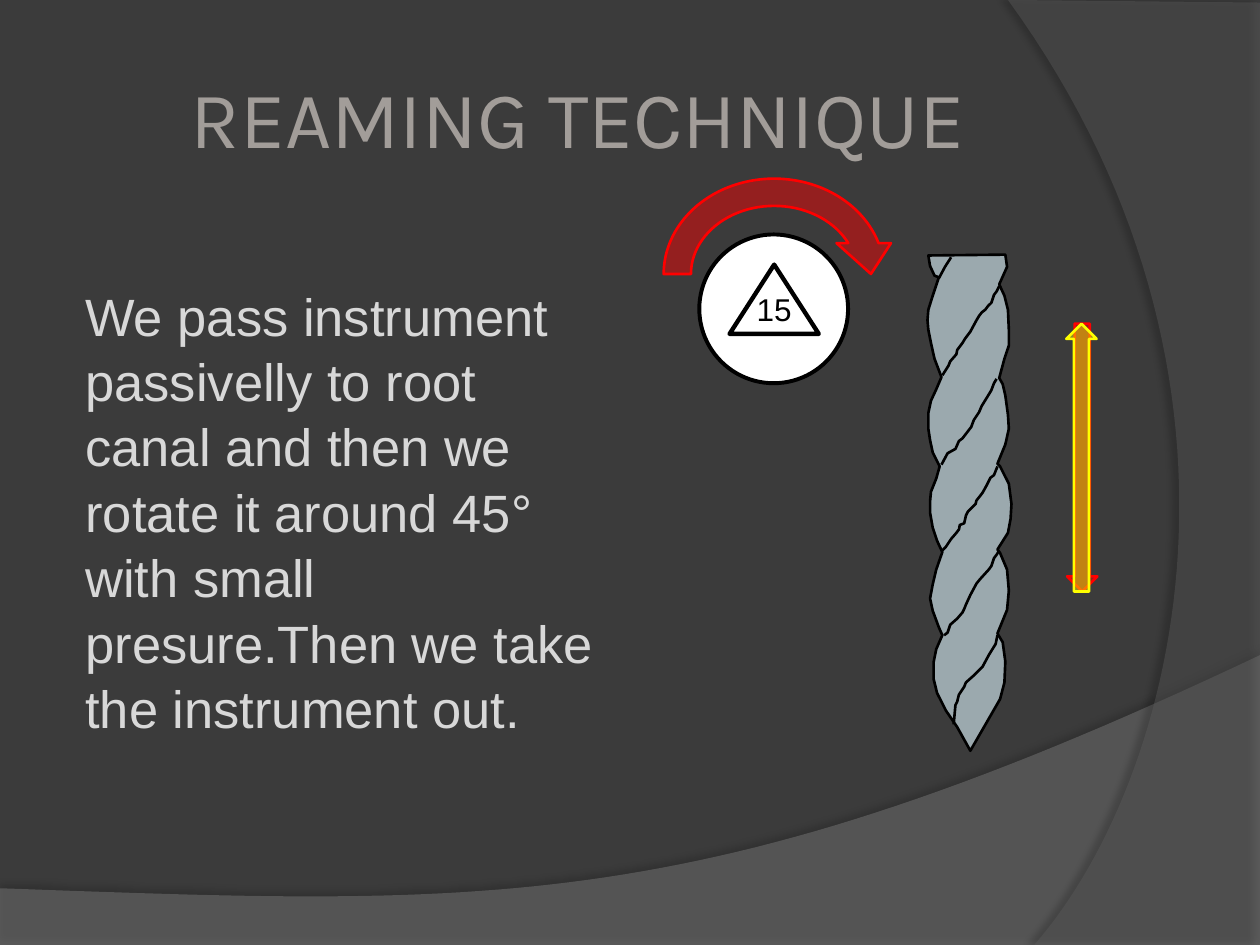
import pptx
import pptx.dml.color
import pptx.enum.shapes
import pptx.enum.text
import pptx.oxml.ns
import pptx.util
from lxml import etree

Pt = pptx.util.Pt
SHAPE = pptx.enum.shapes.MSO_SHAPE
ALIGN = pptx.enum.text.PP_ALIGN
ANCHOR = pptx.enum.text.MSO_ANCHOR
qn = pptx.oxml.ns.qn

# Instrument silhouette and its spiral grooves, in points on the slide
SILHOUETTE = [
    (574.5, 145.5), (530.5, 146), (531.5, 152), (534, 157.5), (536.5, 158.5),
    (533, 169), (530.5, 177), (530, 183), (530.5, 188.5), (532, 196),
    (534, 205), (538, 215.5), (535, 222.5), (532, 229), (530.5, 236),
    (530.5, 245), (531.5, 251.5), (533, 258.5), (537, 266.5), (535, 273.5),
    (532, 281), (531.5, 286.5), (531.5, 293), (533, 301.5), (535.5, 309),
    (538.5, 315.5), (535, 325.5), (533, 334), (531.5, 342), (533, 349),
    (536.5, 358.5), (538.5, 363), (535, 371), (533.5, 378.5), (533.5, 388),
    (535.5, 396), (540.5, 406), (547, 415.5), (554.5, 429), (571.5, 399.5),
    (574, 390), (574.5, 378), (573, 367), (570, 362), (575.5, 348.5),
    (576.5, 337.5), (575.5, 325.5), (571.5, 316), (570, 314), (576, 304.5),
    (577.5, 296.5), (578, 288), (576.5, 276.5), (571.5, 266.5), (570, 265),
    (574.5, 254), (576.5, 245), (576, 237), (574.5, 226), (573, 219.5),
    (571, 216), (574, 205), (576.5, 197.5), (576.5, 188.5), (576, 177),
    (574, 169), (571, 162.5), (575.5, 152.5),
]
GROOVES = [
    [(545, 414), (546, 403), (547, 401), (548, 397), (551, 392.5), (552, 390),
     (556.5, 386), (561.5, 381), (565, 374.5), (566.5, 372), (569, 368), (570, 363)],
    [(539.5, 363), (541.5, 361.5), (543, 357), (547, 353.5), (550, 350), (551, 348),
     (552, 345.5), (554.5, 340), (558, 333.5), (560, 331), (565, 325.5),
     (566.5, 323.5), (568, 319), (569.5, 317), (571, 314.5)],
    [(538.5, 314.5), (540.5, 312.5), (543.5, 308), (546.5, 304.5), (548, 302.5),
     (548.5, 300), (551, 299), (552, 294.5), (553, 292.5), (557.5, 288), (558, 286),
     (560, 283.5), (561.5, 281.5), (564, 277), (566, 273), (568, 271.5), (570, 266.5)],
    [(538, 265.5), (541.5, 259), (546, 256.5), (548, 252), (550, 250.5), (555, 244),
     (556.5, 240), (559.5, 235.5), (561, 232), (565, 225.5), (566.5, 223),
     (568, 219), (569.5, 216.5)],
    [(538.5, 214.5), (542, 209), (543, 206.5), (546.5, 202.5), (547, 200), (550, 196),
     (551.5, 193.5), (554.5, 189.5), (558, 183), (559.5, 180.5), (561, 178.5),
     (563, 177), (564.5, 175), (566.5, 173), (568, 168.5), (569.5, 166.5), (571, 163.5)],
    [(536.5, 159), (540, 152.5), (543.5, 147)],
]


def rgb(code):
    return pptx.dml.color.RGBColor.from_string(code)


def paint(shape, fill=None, opacity=100, line=None, weight=1.5):
    """Set fill, opacity and line, and remove the theme shadow."""
    shape.shadow.inherit = False
    if fill:
        shape.fill.solid()
        shape.fill.fore_color.rgb = rgb(fill)
        if opacity < 100:
            color = shape.fill._xPr.find(qn("a:solidFill"))[0]
            etree.SubElement(color, qn("a:alpha"), val=str(opacity * 1000))
    else:
        shape.fill.background()
    if line:
        shape.line.color.rgb = rgb(line)
        shape.line.width = Pt(weight)
    else:
        shape.line.fill.background()


def add_preset(shapes, kind, box, **look):
    shape = shapes.add_shape(kind, *map(Pt, box))
    paint(shape, **look)
    return shape


def add_outline(shapes, points, closed=True, **look):
    vertices = [(Pt(x), Pt(y)) for x, y in points]
    builder = shapes.build_freeform(*vertices[0])
    builder.add_line_segments(vertices[1:], close=closed)
    shape = builder.convert_to_shape()
    paint(shape, **look)
    return shape


def bezier(p0, p1, p2, p3, steps=60):
    """Points along a cubic curve."""
    def at(t):
        u = 1 - t
        return tuple(u**3 * a + 3 * u*u*t * b + 3 * u*t*t * c + t**3 * d
                     for a, b, c, d in zip(p0, p1, p2, p3))
    return [at(i / steps) for i in range(steps + 1)]


def add_backdrop(slide, depth, points, fill, opacity, shade, distance, angle):
    """A translucent curved area with a soft shadow, behind the content."""
    area = add_outline(slide.shapes, points, fill=fill, opacity=opacity)
    effects = area._element.spPr.find(qn("a:effectLst"))
    shadow = etree.SubElement(effects, qn("a:outerShdw"), blurRad=str(Pt(4)),
                              dist=str(Pt(distance)), dir=str(angle * 60000))
    black = etree.SubElement(shadow, qn("a:srgbClr"), val="000000")
    etree.SubElement(black, qn("a:alpha"), val=str(shade * 1000))
    slide.shapes._spTree.insert(2 + depth, area._element)


def write(box, text, font, size, color, align, anchor=ANCHOR.TOP):
    frame = box.text_frame
    frame.word_wrap = True
    frame.auto_size = pptx.enum.text.MSO_AUTO_SIZE.NONE
    frame.vertical_anchor = anchor
    paragraph = frame.paragraphs[0]
    paragraph.alignment = align
    run = paragraph.add_run()
    run.text = text
    run.font.name = font
    run.font.size = Pt(size)
    run.font.color.rgb = rgb(color)
    return paragraph


def place(box, left, top, width, height):
    box.left, box.top, box.width, box.height = map(Pt, (left, top, width, height))


def main():
    deck = pptx.Presentation()
    deck.slide_width, deck.slide_height = Pt(720), Pt(540)
    slide = deck.slides.add_slide(deck.slide_layouts[1])
    shapes = slide.shapes
    slide.background.fill.solid()
    slide.background.fill.fore_color.rgb = rgb("3B3B3B")

    # Curved backdrop
    floor = [(0, 540), (720, 540)] + bezier(
        (720, 374.4), (402.5, 525), (281.5, 517.7), (0, 507.6))
    side = [(720, 1.5), (720, 540)] + bezier(
        (591, 540), (673, 446), (733, 216), (576, 0))
    add_backdrop(slide, 0, floor, "7F7F7F", 45, 35, 3.5, 270)
    add_backdrop(slide, 1, side, "5E5E5E", 40, 45, 4, 180)

    # Title and description
    title, description = shapes.title, slide.placeholders[1]
    place(title, 36, 21.6, 588, 90)
    write(title, "REAMING TECHNIQUE", "Karla", 46, "A29D99", ALIGN.CENTER, ANCHOR.MIDDLE)
    place(description, 8.6, 157, 346.3, 356.4)
    paragraph = write(
        description,
        "We pass instrument passivelly to root canal and then we rotate it around 45° "
        "with small presure.Then we take the instrument out.",
        "Arial", 30, "D8D8D8", ALIGN.LEFT)
    paragraph.space_before = Pt(0)
    paragraph.line_spacing = 1.04
    properties = paragraph._p.get_or_add_pPr()
    properties.set("marL", str(Pt(33)))
    properties.set("indent", "0")
    etree.SubElement(properties, qn("a:buNone"))

    # Handle symbol: instrument number in a triangle
    handle = shapes.add_group_shape().shapes
    add_preset(handle, SHAPE.OVAL, (399.6, 134, 85, 85),
               fill="FFFFFF", line="000000", weight=2.25)
    add_preset(handle, SHAPE.ISOSCELES_TRIANGLE, (416.9, 151.2, 51, 39.6),
               fill="FFFFFF", line="000000", weight=2.5)
    number = handle.add_textbox(*map(Pt, (416.9, 162, 51, 28.8)))
    write(number, "15", "Arial", 18, "000000", ALIGN.CENTER)

    # Rotation, then insertion and withdrawal
    add_preset(shapes, SHAPE.CIRCULAR_ARROW, (371.5, 94.3, 141.8, 124.6),
               fill="FF0000", opacity=46, line="FF0000")
    for left, color, turn in ((609.8, "FF0000", 0), (609.3, "FFFF00", 180)):
        arrow = add_preset(shapes, SHAPE.DOWN_ARROW, (left, 185, 17.3, 153),
                           fill=color, opacity=44, line=color)
        arrow.rotation = turn

    # Reamer
    reamer = shapes.add_group_shape().shapes
    add_outline(reamer, SILHOUETTE, fill="C5D9DF", opacity=70, line="000000")
    for groove in GROOVES:
        add_outline(reamer, groove, closed=False, line="000000")

    deck.save("out.pptx")


if __name__ == "__main__":
    main()
